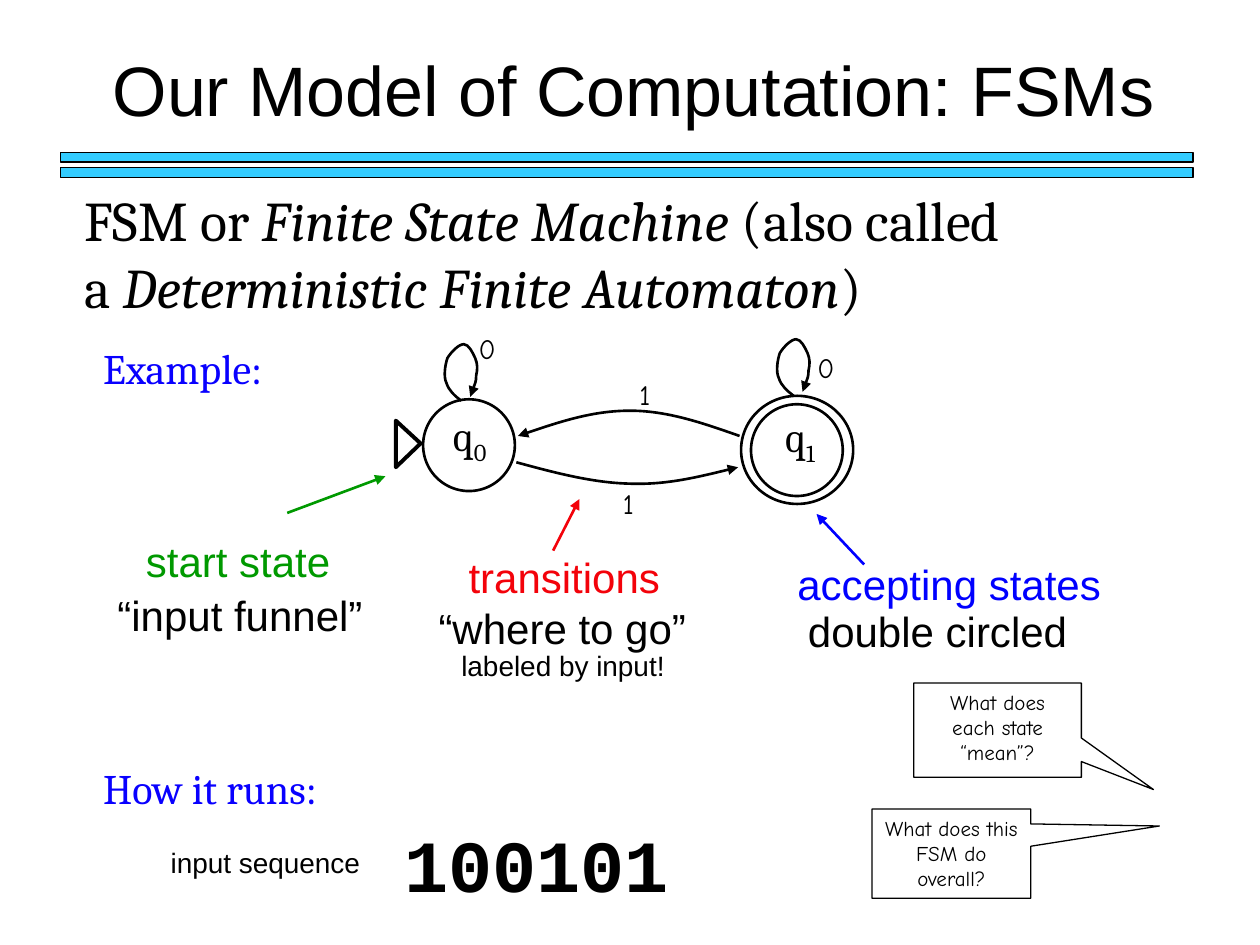
import pptx
import pptx.dml.color
import pptx.enum.shapes
import pptx.enum.text
import pptx.oxml.ns
import pptx.util
from lxml import etree
from pptx.util import Cm

RGBColor = pptx.dml.color.RGBColor
Shape = pptx.enum.shapes.MSO_SHAPE
Anchor = pptx.enum.text.MSO_ANCHOR
Align = pptx.enum.text.PP_ALIGN
AutoSize = pptx.enum.text.MSO_AUTO_SIZE
qn = pptx.oxml.ns.qn

BLACK = RGBColor(0x00, 0x00, 0x00)
SKY = RGBColor(0x33, 0xCC, 0xFF)
INDIGO = RGBColor(0x09, 0x00, 0xFF)
BLUE = RGBColor(0x00, 0x00, 0xFF)
GREEN = RGBColor(0x00, 0x99, 0x00)
RED = RGBColor(0xF3, 0x02, 0x0A)

# Control points of a self-loop, measured from where it leaves the state
LOOP = [(0, 0), (-.13, -.1), (-.25, -.2), (-.3, -.36), (-.36, -.48), (-.33, -.71),
        (-.28, -.86), (-.2, -.99), (-.05, -1.14), (.05, -1.14), (.15, -1.14),
        (.23, -.97), (.28, -.86), (.33, -.74), (.33, -.64), (.3, -.51),
        (.3, -.38), (.23, -.23), (.18, -.08)]
TO_ACCEPTING = [(10.41, 9.32), (11.18, 9.53), (11.94, 9.73), (12.67, 9.75),
                (13.41, 9.78), (14.15, 9.6), (14.88, 9.42)]
TO_START = [(14.91, 8.79), (14.17, 8.53), (13.46, 8.28), (12.7, 8.28),
            (11.96, 8.28), (11.2, 8.53), (10.44, 8.79)]


class Sketch:
    """Draws on one page; all positions and sizes are in centimetres."""

    heading = {"name": "Arial", "size": 40}
    body = {"name": "Cambria", "size": 32}
    section = {"name": "Cambria", "size": 24, "color": INDIGO}
    state = {"name": "Cambria", "size": 24}
    symbol = {"name": "Comic Neue", "size": 16}
    question = {"name": "Comic Neue", "size": 12}
    note = {"name": "Arial", "size": 24}
    small = {"name": "Arial", "size": 16}
    tape = {"name": "Courier New", "size": 42, "bold": True}

    def __init__(self, page):
        self.page = page

    def fill_text(self, frame, spans, style, align):
        """Fill a frame with (text, extra format) spans in one paragraph."""
        para = frame.paragraphs[0]
        para.alignment = align
        for words, extra in spans:
            span = para.add_run()
            span.text = words
            for key, value in {"color": BLACK, **style, **extra}.items():
                if key == "color":
                    span.font.color.rgb = value
                elif key == "baseline":
                    span._r.get_or_add_rPr().set("baseline", value)
                else:
                    setattr(span.font, key, pptx.util.Pt(value) if key == "size" else value)

    def text(self, place, spans, style, align=Align.CENTER, anchor=Anchor.MIDDLE, wrap=False):
        if isinstance(spans, str):
            spans = [(spans, {})]
        box = self.page.shapes.add_textbox(*map(Cm, place))
        layout = {"word_wrap": wrap, "vertical_anchor": anchor,
                  "auto_size": AutoSize.SHAPE_TO_FIT_TEXT}
        for key, value in layout.items():
            setattr(box.text_frame, key, value)
        self.fill_text(box.text_frame, spans, style, align)

    def outline(self, shape, width, fill=None):
        shape.shadow.inherit = False
        if fill is None:
            shape.fill.background()
        else:
            shape.fill.solid()
            shape.fill.fore_color.rgb = fill
        shape.line.color.rgb = BLACK
        shape.line.width = pptx.util.Pt(width)

    def shape(self, kind, place, width, fill=None):
        shape = self.page.shapes.add_shape(kind, *map(Cm, place))
        self.outline(shape, width, fill)
        return shape

    def callout(self, place, tip, words):
        shape = self.shape(Shape.RECTANGULAR_CALLOUT, place, 0.75)
        shape.adjustments[0], shape.adjustments[1] = tip
        shape.text_frame.word_wrap = True
        shape.text_frame.vertical_anchor = Anchor.TOP
        self.fill_text(shape.text_frame, [(words, {})], self.question, Align.CENTER)

    def freeform(self, points, width, close):
        corners = [(Cm(x), Cm(y)) for x, y in points]
        builder = self.page.shapes.build_freeform(*corners[0], scale=1.0)
        builder.add_line_segments(corners[1:], close=close)
        shape = builder.convert_to_shape()
        self.outline(shape, width)
        return shape

    def arrowhead(self, line):
        etree.SubElement(line.line._get_or_add_ln(), qn("a:tailEnd"), type="triangle")

    def curve(self, points):
        """Draw a Bezier arrow: a start, then three points for each piece."""
        shape = self.freeform(points, 1.5, close=False)
        outline = shape._element.find(".//" + qn("a:path"))
        steps = outline.findall(qn("a:lnTo"))
        for first in range(0, len(steps), 3):
            piece = etree.SubElement(outline, qn("a:cubicBezTo"))
            for step in steps[first:first + 3]:
                piece.append(step[0])
                outline.remove(step)
        self.arrowhead(shape)

    def arrow(self, start, end, color):
        line = self.page.shapes.add_connector(
            pptx.enum.shapes.MSO_CONNECTOR.STRAIGHT, *map(Cm, start + end))
        line.line.color.rgb = color
        line.line.width = pptx.util.Pt(1.5)
        self.arrowhead(line)
        etree.SubElement(line._element.spPr, qn("a:effectLst"))


def draw_header(sketch):
    for top in (3.07, 3.38):
        sketch.shape(Shape.RECTANGLE, (1.22, top, 22.83, 0.2), 0.75, SKY)
    sketch.text((1.96, 0.81, 21.62, 1.96), "Our Model of Computation: FSMs",
                sketch.heading, anchor=Anchor.TOP, wrap=True)
    italic = {"italic": True}
    definition = [("FSM or ", {}), ("Finite State Machine ", italic), ("(also called a ", {}),
                  ("Deterministic Finite Automaton", italic), (")", {})]
    sketch.text((1.45, 3.61, 19.08, 2.97), definition, sketch.body, Align.LEFT, wrap=True)
    for top, words in ((6.78, "Example:"), (15.24, "How it runs:")):
        sketch.text((1.83, top, 9, 1.27), words, sketch.section, Align.LEFT, wrap=True)


def draw_machine(sketch):
    states = [("0", (8.53, 8.05), (8.86, 8.18), (9.3, 8.08)),
              ("1", (15.14, 8.15), (15.52, 8.2), (16, 7.98))]
    for index, circle, label, (x, y) in states:
        sketch.shape(Shape.OVAL, circle + (1.85, 1.85), 1.5)
        sketch.text(label + (1.22, 1.3), [("q", {}), (index, {"baseline": "-25000"})],
                    sketch.state)
        sketch.curve([(x + dx, y + dy) for dx, dy in LOOP])
    sketch.shape(Shape.OVAL, (14.94, 7.98, 2.26, 2.18), 1.5)
    sketch.curve(TO_ACCEPTING)
    sketch.curve(TO_START)
    for symbol, left, top in (("1", 12.6, 7.47), ("0", 9.4, 6.55),
                              ("1", 12.27, 9.68), ("0", 16.23, 6.93)):
        sketch.text((left, top, 0.8, 0.94), symbol, sketch.symbol)
    sketch.freeform([(7.98, 8.48), (7.98, 9.42), (8.48, 8.94)], 2.25, close=True)


def draw_notes(sketch):
    notes = [("start state", (2.69, 10.67, 4.22), GREEN),
             ("“input funnel”", (2.11, 11.76, 5.46), BLACK),
             ("accepting states", (15.82, 11.13, 6.63), BLUE),
             ("double circled", (16.03, 12.07, 5.74), BLACK),
             ("transitions", (9.19, 11, 4.37), RED),
             ("“where to go”", (8.59, 12.01, 5.49), BLACK)]
    for words, place, color in notes:
        sketch.text(place + (1.27,), words, {**sketch.note, "color": color})
    sketch.text((9.04, 12.95, 4.62, 0.94), "labeled by input!", sketch.small)
    sketch.arrow((5.79, 10.34), (7.77, 9.6), GREEN)
    sketch.arrow((17.42, 11.38), (16.46, 10.36), BLUE)
    sketch.arrow((11.15, 11.1), (11.68, 10.06), RED)


def draw_run(sketch):
    sketch.text((7.9, 16.38, 9.32, 2.03), "100101", sketch.tape, Align.LEFT, Anchor.TOP, True)
    sketch.text((3.18, 16.92, 4.34, 0.94), "input sequence", sketch.small)
    sketch.callout((17.58, 16.31, 3.2, 1.8), (1.31, -0.31), "What does this FSM do overall?")
    sketch.callout((18.42, 13.77, 3.38, 1.9), (0.93, 0.63), "What does each state “mean”?")


def main():
    deck = pptx.Presentation()
    deck.slide_width, deck.slide_height = Cm(25.4), Cm(19.05)
    sketch = Sketch(deck.slides.add_slide(deck.slide_layouts[6]))
    draw_header(sketch)
    draw_machine(sketch)
    draw_notes(sketch)
    draw_run(sketch)
    deck.save("out.pptx")


if __name__ == "__main__":
    main()
